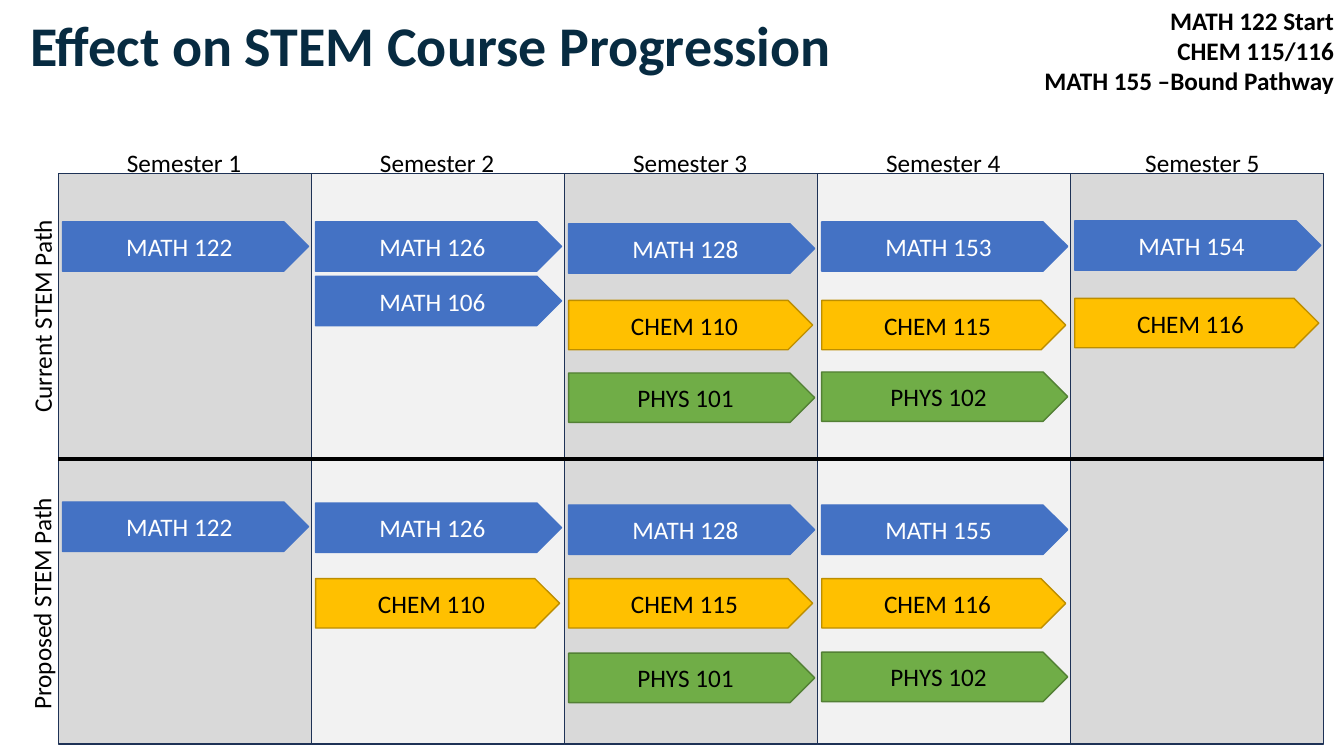
from lxml import etree
from pptx import Presentation
from pptx.dml.color import RGBColor
from pptx.enum.shapes import MSO_CONNECTOR, MSO_SHAPE
from pptx.enum.text import MSO_ANCHOR, PP_ALIGN
from pptx.oxml.ns import qn
from pptx.util import Inches, Pt

FONT = "Calibri"
COLORS = {
    "title": "072B41", "black": "000000", "white": "FFFFFF",
    "dark_column": "D9D9D9", "light_column": "F2F2F2", "column_line": "1E3256",
}
# Subject: fill, line, text colour, arrow width
SUBJECTS = {
    "MATH": ("4472C4", "4472C4", COLORS["white"], 2.44),
    "CHEM": ("FFC000", "BD8E00", COLORS["black"], 2.42),
    "PHYS": ("70AD47", "538035", COLORS["black"], 2.44),
}
GRID_LEFT, GRID_TOP, GRID_HEIGHT = 0.58, 1.72, 5.66
COLUMN_WIDTH = 2.51
ARROW_INSET, ARROW_HEIGHT = 0.04, 0.49
LABEL_LEFTS = [1.16, 3.67, 6.18, 8.69, 11.26]

# Each path lists its semesters as (course, top)
CURRENT_PATH = [
    [("MATH 122", 2.2)],
    [("MATH 126", 2.2), ("MATH 106", 2.74)],
    [("MATH 128", 2.22), ("CHEM 110", 2.98), ("PHYS 101", 3.7)],
    [("MATH 153", 2.2), ("CHEM 115", 2.98), ("PHYS 102", 3.69)],
    [("MATH 154", 2.19), ("CHEM 116", 2.96)],
]
PROPOSED_PATH = [
    [("MATH 122", 4.98)],
    [("MATH 126", 4.99), ("CHEM 110", 5.74)],
    [("MATH 128", 5.01), ("CHEM 115", 5.74), ("PHYS 101", 6.48)],
    [("MATH 155", 5.01), ("CHEM 116", 5.74), ("PHYS 102", 6.47)],
]


def rgb(color):
    return RGBColor.from_string(color)


def add_run(paragraph, text, color, size=18, bold=False):
    run = paragraph.add_run()
    run.text = text
    run.font.name = FONT
    run.font.size = Pt(size)
    run.font.bold = bold
    run.font.color.rgb = rgb(color)


def add_text(slide, lines, left, top, width, height, color=COLORS["black"],
             size=18, bold=False, align=PP_ALIGN.LEFT, wrap=False, spacing=None):
    box = slide.shapes.add_textbox(
        Inches(left), Inches(top), Inches(width), Inches(height))
    frame = box.text_frame
    frame.word_wrap = wrap
    for index, line in enumerate(lines):
        paragraph = frame.add_paragraph() if index else frame.paragraphs[0]
        paragraph.alignment = align
        paragraph.line_spacing = spacing
        add_run(paragraph, line, color, size, bold)
    return box


def add_block(slide, kind, left, top, width, height, fill, line):
    shape = slide.shapes.add_shape(
        kind, Inches(left), Inches(top), Inches(width), Inches(height))
    shape.shadow.inherit = False
    shape.fill.solid()
    shape.fill.fore_color.rgb = rgb(fill)
    shape.line.color.rgb = rgb(line)
    shape.line.width = Pt(1)
    return shape


def add_course(slide, name, semester, top):
    fill, line, text_color, width = SUBJECTS[name.split()[0]]
    left = GRID_LEFT + semester * COLUMN_WIDTH + ARROW_INSET
    arrow = add_block(slide, MSO_SHAPE.PENTAGON, left, top, width,
                      ARROW_HEIGHT, fill, line)
    arrow.text_frame.vertical_anchor = MSO_ANCHOR.MIDDLE
    paragraph = arrow.text_frame.paragraphs[0]
    paragraph.alignment = PP_ALIGN.CENTER
    add_run(paragraph, name, text_color)


def add_divider(slide, left, right, top):
    divider = slide.shapes.add_connector(
        MSO_CONNECTOR.STRAIGHT, Inches(left), Inches(top), Inches(right), Inches(top))
    divider.line.color.rgb = rgb(COLORS["black"])
    divider.line.width = Pt(3)
    etree.SubElement(divider._element.spPr, qn("a:effectLst"))


def main():
    presentation = Presentation()
    presentation.slide_width = Inches(13.33)
    presentation.slide_height = Inches(7.5)
    slide = presentation.slides.add_slide(presentation.slide_layouts[6])

    # Semester columns and their labels
    for semester, label_left in enumerate(LABEL_LEFTS):
        fill = COLORS["light_column" if semester % 2 else "dark_column"]
        add_block(slide, MSO_SHAPE.RECTANGLE, GRID_LEFT + semester * COLUMN_WIDTH,
                  GRID_TOP, COLUMN_WIDTH, GRID_HEIGHT, fill, COLORS["column_line"])
        add_text(slide, [f"Semester {semester + 1}"], label_left, 1.41, 1.35, 0.4)

    # Course arrows
    for path_courses in (CURRENT_PATH, PROPOSED_PATH):
        for semester, courses in enumerate(path_courses):
            for name, top in courses:
                add_course(slide, name, semester, top)

    # Divider and path labels
    add_divider(slide, GRID_LEFT, GRID_LEFT + len(LABEL_LEFTS) * COLUMN_WIDTH, 4.55)
    for label, left, top, width in (("Current STEM Path", -0.65, 2.93, 2.13),
                                    ("Proposed STEM Path", -0.75, 5.78, 2.32)):
        add_text(slide, [label], left, top, width, 0.4).rotation = 270

    # Title and pathway note
    add_text(slide, ["Effect on STEM Course Progression"], 0.2, 0.13, 11.5, 0.76,
             COLORS["title"], size=40, bold=True, wrap=True, spacing=0.9)
    add_text(slide, ["MATH 122 Start", "CHEM 115/116", "MATH 155 –Bound Pathway"],
             10.23, 0, 3.1, 1.01, bold=True, align=PP_ALIGN.RIGHT)

    presentation.save("out.pptx")


if __name__ == "__main__":
    main()
